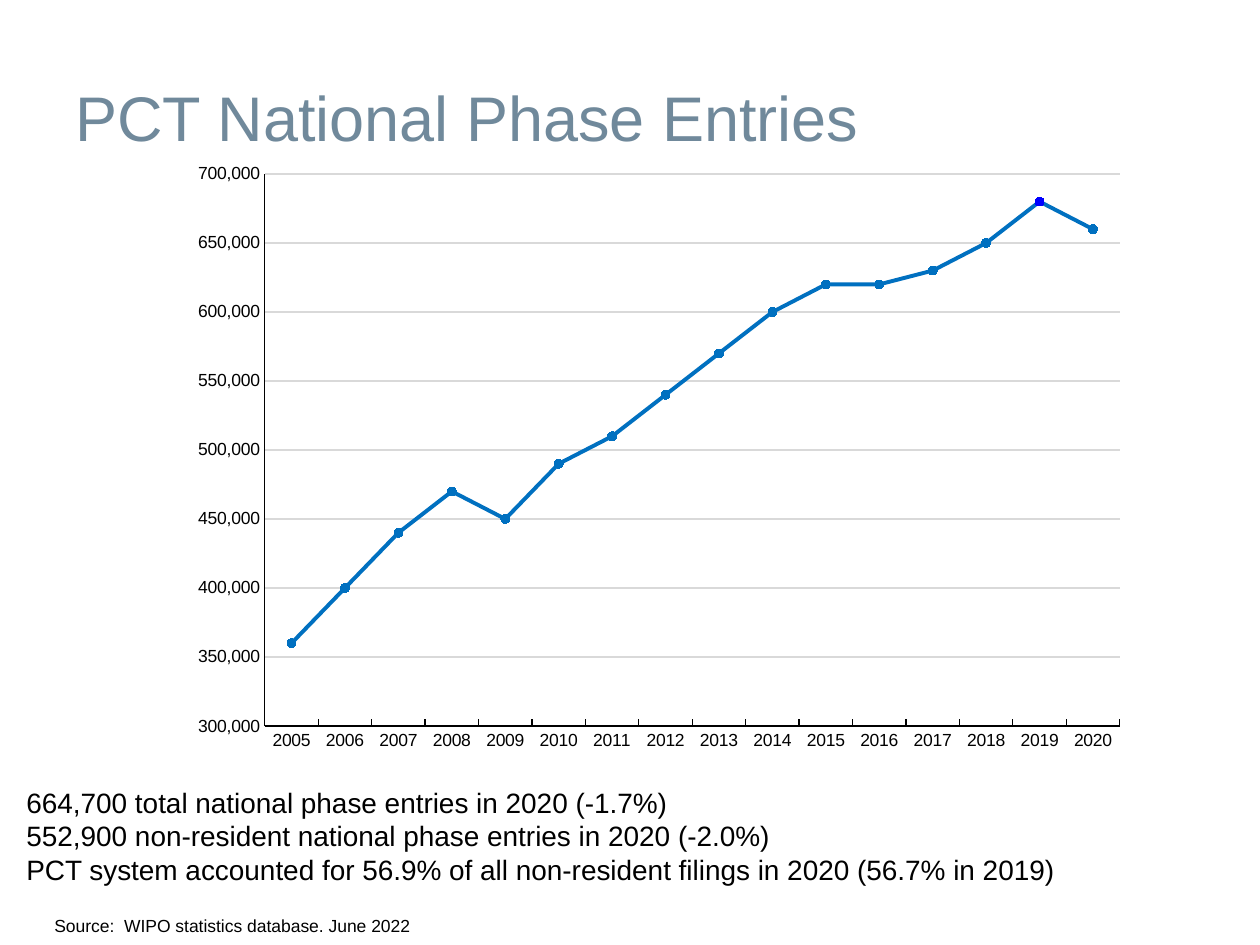
import pptx
import pptx.chart.data
import pptx.dml.color
import pptx.enum.chart
import pptx.enum.text
import pptx.util

PX = pptx.util.Inches(1) / 126
FONT = "Arial"


def rgb(value):
    return pptx.dml.color.RGBColor.from_string(value)


def add_text(box, lines, size, color):
    """Add a text box at box (px); the lines form one paragraph with breaks."""
    frame = slide.shapes.add_textbox(*[round(v * PX) for v in box]).text_frame
    frame.word_wrap = True
    paragraph = frame.paragraphs[0]
    for index, line in enumerate(lines):
        if index:
            paragraph.add_line_break()
        run = paragraph.add_run()
        run.text = line
        run.font.name = FONT
        run.font.size = pptx.util.Pt(size)
        run.font.color.rgb = rgb(color)
    return frame


prs = pptx.Presentation()
prs.slide_width = round(1260 * PX)
prs.slide_height = round(945 * PX)
slide = prs.slides.add_slide(prs.slide_layouts[6])

title = add_text((63, 38, 1134, 157), ["PCT National Phase Entries"], 36, "70899B")
title.vertical_anchor = pptx.enum.text.MSO_ANCHOR.MIDDLE

add_text((42, 909, 630, 34), ["Source:  WIPO statistics database. June 2022"], 10, "000000")
findings = [
    "664,700 total national phase entries in 2020 (-1.7%)",
    "552,900 non-resident national phase entries in 2020 (-2.0%)",
    "PCT system accounted for 56.9% of all non-resident filings in 2020 (56.7% in 2019)",
]
add_text((14, 779, 1187, 115), findings, 16, "000000")

# National phase entries per year, in ten thousands
entries = [36, 40, 44, 47, 45, 49, 51, 54, 57, 60, 62, 62, 63, 65, 68, 66]
years = [str(year) for year in range(2005, 2021)]
entry_data = pptx.chart.data.CategoryChartData(number_format="#,##0")
entry_data.categories = years
entry_data.add_series("National phase entries", [n * 10000 for n in entries])

chart = slide.shapes.add_chart(
    pptx.enum.chart.XL_CHART_TYPE.LINE_MARKERS,
    *[round(v * PX) for v in (179, 152, 960, 611)], entry_data).chart
chart.has_legend = False
chart.has_title = False
chart.font.name = FONT
chart.font.size = pptx.util.Pt(10)
chart.font.color.rgb = rgb("000000")
chart.plots[0].vary_by_categories = False

year_axis, entry_axis = chart.category_axis, chart.value_axis
ticks = pptx.enum.chart.XL_TICK_MARK
year_axis.major_tick_mark = ticks.INSIDE
entry_axis.major_tick_mark = ticks.NONE
entry_axis.minimum_scale = 300000
entry_axis.maximum_scale = 700000
entry_axis.major_unit = 50000
entry_axis.tick_labels.number_format = "#,##0"
entry_axis.tick_labels.number_format_is_linked = False
entry_axis.has_major_gridlines = True

series = chart.plots[0].series[0]
series.smooth = False
peak = series.points[years.index("2019")]
for line, color, width in (
    (year_axis.format.line, "000000", 0.75),
    (entry_axis.format.line, "000000", 0.75),
    (entry_axis.major_gridlines.format.line, "D9D9D9", 0.75),
    (series.format.line, "0070C0", 2.25),
    (peak.format.line, "0000FF", 2.25),
):
    line.color.rgb = rgb(color)
    line.width = pptx.util.Pt(width)

for marker, color in ((series.marker, "0070C0"), (peak.marker, "0000FF")):
    marker.style = pptx.enum.chart.XL_MARKER_STYLE.CIRCLE
    marker.size = 5
    marker.format.fill.solid()
    marker.format.fill.fore_color.rgb = rgb(color)
    marker.format.line.color.rgb = rgb(color)

prs.save("out.pptx")
